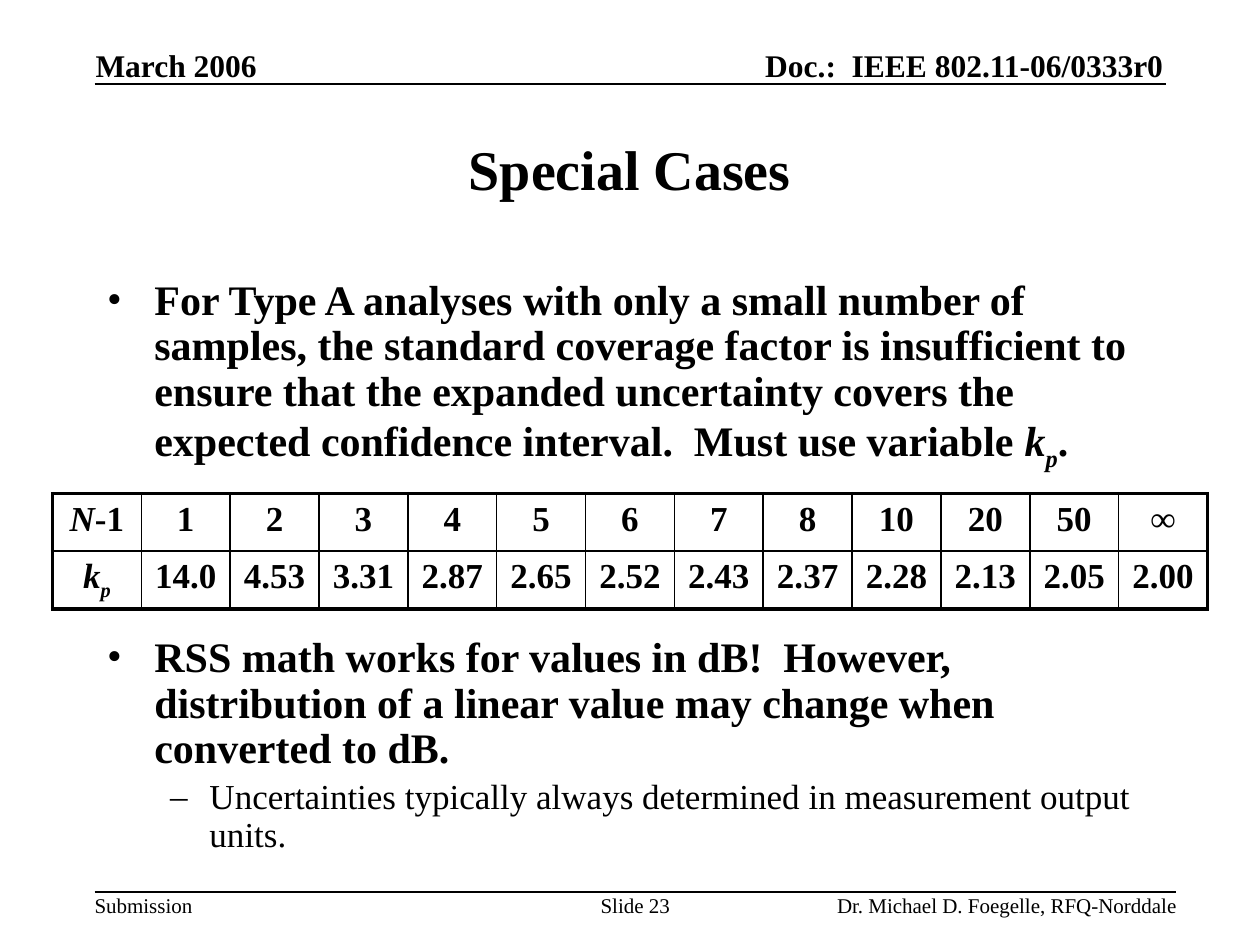
"""Build the Special Cases slide on a grid of twelfths of an inch."""
import dataclasses
import typing

import pptx
import pptx.dml.color
import pptx.enum.shapes
import pptx.enum.text
import pptx.oxml
import pptx.oxml.ns
import pptx.util

COLUMNS, ROWS = 120, 90
CELL = pptx.util.Inches(1) // 12
FONT = "Times New Roman"
COLOURS = {"ink": "000000"}
ALIGN = pptx.enum.text.PP_ALIGN
ANCHOR = pptx.enum.text.MSO_ANCHOR
FIT = pptx.enum.text.MSO_AUTO_SIZE


class Span(typing.NamedTuple):
    text: str
    italic: bool = False
    subscript: bool = False


@dataclasses.dataclass
class Label:
    text: str
    area: tuple
    size: int
    bold: bool
    align: ALIGN
    anchor: ANCHOR


@dataclasses.dataclass
class Bullet:
    spans: list
    size: int
    bold: bool
    mark: str
    level: int
    left: float
    hanging: float
    before: float


KP = [Span("k", True), Span("p", True, True)]
LABELS = [
    Label("Doc.:  IEEE 802.11-06/0333r0", (66.8, 4.4, 44, 3.6), 18, True, ALIGN.RIGHT, ANCHOR.BOTTOM),
    Label("March 2006", (9.1, 4.4, 16, 3.6), 18, True, ALIGN.LEFT, ANCHOR.BOTTOM),
    Label("Submission", (9, 85, 10, 2.4), 12, False, ALIGN.LEFT, ANCHOR.TOP),
    Label("Slide 23", (57, 85, 7, 2.4), 12, False, ALIGN.CENTER, ANCHOR.TOP),
    Label("Dr. Michael D. Foegelle, RFQ-Norddale", (76.1, 85, 36, 2.4), 12, False, ALIGN.RIGHT, ANCHOR.TOP),
]
RULES = [(9, 111, 8), (9, 112, 84.96)]
BULLETS = [
    Bullet([Span("For Type A analyses with only a small number of samples, the standard coverage "
                 "factor is insufficient to ensure that the expanded uncertainty covers the expected "
                 "confidence interval.  Must use variable "), *KP, Span(".")],
           24, True, "•", 0, 4.5, 4.5, 4.8),
    Bullet([Span("RSS math works for values in dB!  However, distribution of a linear value may "
                 "change when converted to dB.")], 24, True, "•", 0, 4.5, 4.5, 97),
    Bullet([Span("Uncertainties typically always determined in measurement output units.")],
           20, False, "–", 1, 9.75, 3.75, 4),
]
FACTORS = {"1": "14.0", "2": "4.53", "3": "3.31", "4": "2.87", "5": "2.65", "6": "2.52",
           "7": "2.43", "8": "2.37", "10": "2.28", "20": "2.13", "50": "2.05", "∞": "2.00"}


def grid(*units: float) -> list:
    """Turn grid units into lengths."""
    return [round(unit * CELL) for unit in units]


def place(shape, area: tuple) -> None:
    """Move a shape to an area of the grid."""
    shape.left, shape.top, shape.width, shape.height = grid(*area)


def write(para, spans: list, size: int, bold: bool, align: ALIGN) -> None:
    """Fill a paragraph with spans in one font."""
    para.alignment = align
    para.font.name, para.font.size = FONT, pptx.util.Pt(size)
    para.font.color.rgb = pptx.dml.color.RGBColor.from_string(COLOURS["ink"])
    for span in spans:
        run = para.add_run()
        run.text = span.text
        run.font.bold = bold
        if span.italic:
            run.font.italic = True
        if span.subscript:
            run.font._element.set("baseline", "-25000")


def add_xml(parent, xml: str) -> None:
    """Append a drawing element given as text."""
    head, tail = xml.split(" ", 1)
    parent.append(pptx.oxml.parse_xml(f"{head} {pptx.oxml.ns.nsdecls('a')} {tail}"))


def add_label(page, label: Label) -> None:
    """Draw one header or footer text."""
    box = page.shapes.add_textbox(*grid(*label.area))
    frame = box.text_frame
    frame.margin_left = frame.margin_top = frame.margin_right = frame.margin_bottom = 0
    frame.word_wrap, frame.auto_size = False, FIT.SHAPE_TO_FIT_TEXT
    frame.vertical_anchor = label.anchor
    write(frame.paragraphs[0], [Span(label.text)], label.size, label.bold, label.align)


def add_rule(page, left: float, right: float, row: float) -> None:
    """Draw one horizontal line."""
    rule = page.shapes.add_connector(pptx.enum.shapes.MSO_CONNECTOR.STRAIGHT, *grid(left, row, right, row))
    rule.line.width = pptx.util.Pt(1)
    rule.line.color.rgb = pptx.dml.color.RGBColor.from_string(COLOURS["ink"])
    add_xml(rule._element.spPr, "<a:effectLst />")


def add_bullet(para, bullet: Bullet) -> None:
    """Write one list item with its mark and indent."""
    properties = para._p.get_or_add_pPr()
    left, hanging = grid(bullet.left, bullet.hanging)
    properties.set("marL", str(left))
    properties.set("indent", str(-hanging))
    add_xml(properties, f'<a:buFont typeface="{FONT}"/>')
    add_xml(properties, f'<a:buChar char="{bullet.mark}"/>')
    para.level, para.line_spacing = bullet.level, 0.9
    para.space_before = pptx.util.Pt(bullet.before)
    write(para, bullet.spans, bullet.size, bullet.bold, ALIGN.LEFT)


def add_borders(cell, outer: dict) -> None:
    """Give a cell thick outer and thin inner borders."""
    properties = cell._tc.get_or_add_tcPr()
    for side, is_outer in outer.items():
        width = pptx.util.Pt(2.25 if is_outer else 1)
        add_xml(properties, f'<a:ln{side} w="{width}"><a:solidFill><a:srgbClr val="{COLOURS["ink"]}"/>'
                            f"</a:solidFill></a:ln{side}>")


def add_factors(page) -> None:
    """Draw the table of coverage factors."""
    rows = [[[Span("N", True), Span("-1")], *([Span(key)] for key in FACTORS)],
            [KP, *([Span(value)] for value in FACTORS.values())]]
    last_row, last_column = len(rows) - 1, len(FACTORS)
    table = page.shapes.add_table(len(rows), last_column + 1, *grid(5, 47, 110, 11)).table
    table.first_row = table.horz_banding = False
    for row, entries in enumerate(rows):
        for column, spans in enumerate(entries):
            cell = table.cell(row, column)
            add_borders(cell, {"L": column == 0, "R": column == last_column,
                               "T": row == 0, "B": row == last_row})
            cell.fill.background()
            cell.margin_bottom = pptx.util.Inches(0.02)
            write(cell.text_frame.paragraphs[0], spans, 20, True, ALIGN.CENTER)


def main() -> None:
    """Build and save the deck."""
    deck = pptx.Presentation()
    deck.slide_width, deck.slide_height = grid(COLUMNS, ROWS)
    page = deck.slides.add_slide(deck.slide_layouts[1])
    title, body = page.placeholders
    place(title, (9, 9, 102, 14))
    title.text_frame.vertical_anchor = ANCHOR.MIDDLE
    write(title.text_frame.paragraphs[0], [Span("Special Cases")], 32, True, ALIGN.CENTER)
    place(body, (9, 26, 102, 58))
    body.text_frame.auto_size = FIT.NONE
    for index, bullet in enumerate(BULLETS):
        frame = body.text_frame
        add_bullet(frame.add_paragraph() if index else frame.paragraphs[0], bullet)
    for rule in RULES:
        add_rule(page, *rule)
    for label in LABELS:
        add_label(page, label)
    add_factors(page)
    deck.save("out.pptx")


if __name__ == "__main__":
    main()
